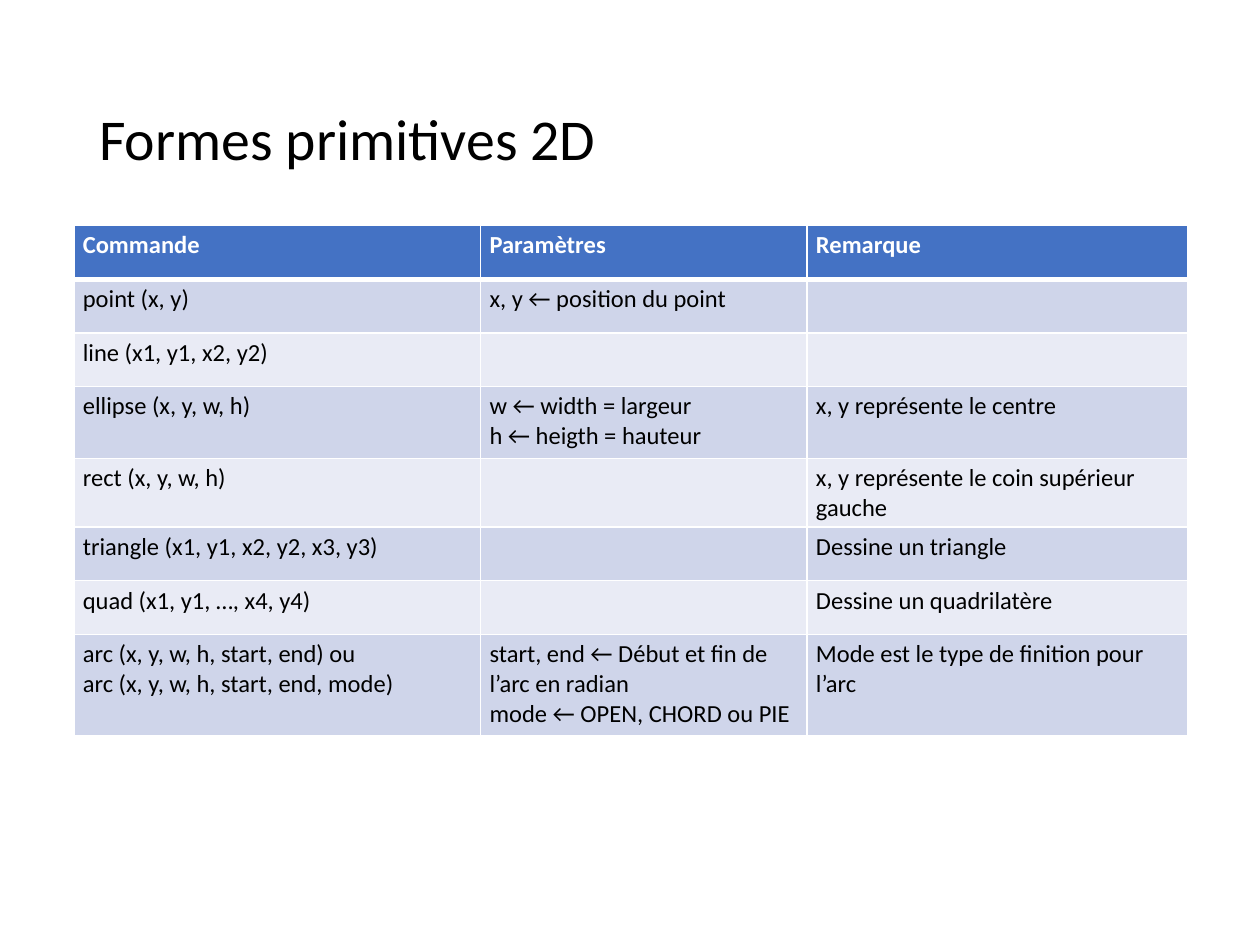
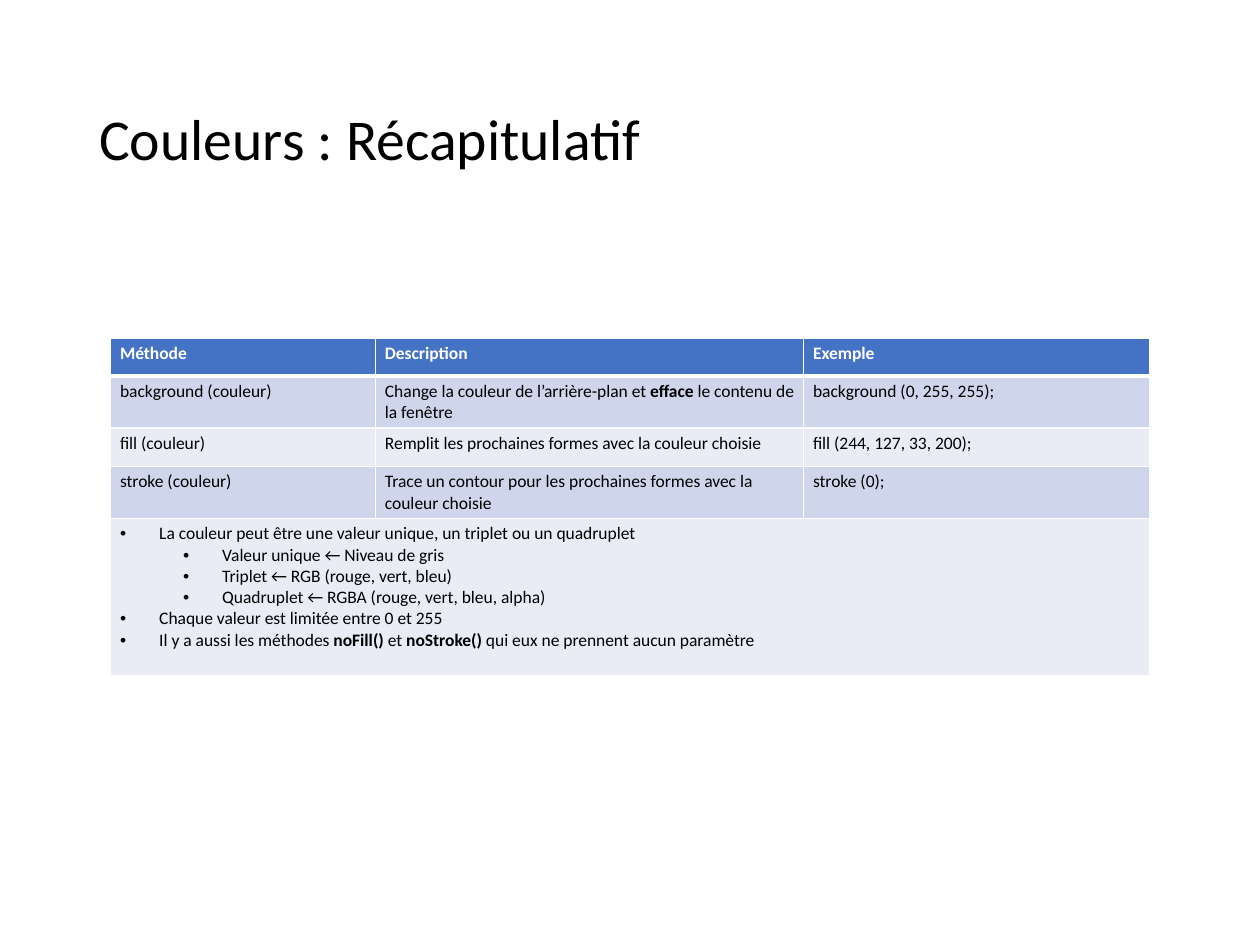
from dataclasses import dataclass

from lxml.etree import SubElement as Sub
from pptx import Presentation as Deck
from pptx.dml.color import RGBColor as Rgb
from pptx.enum.text import MSO_ANCHOR as Anchor
from pptx.oxml.ns import qn
from pptx.util import Cm, Pt


@dataclass(frozen=True)
class Theme:
    font: str = "Calibri"
    ink: str = "000000"
    white: str = "FFFFFF"
    head: str = "4472C4"
    bands: tuple[str, str] = ("CFD5EA", "E9EBF5")
    title: float = 33
    thin: float = 1
    thick: float = 3


THEME = Theme()


@dataclass(frozen=True)
class Para:
    """One paragraph: *stars* mark bold, a line feed breaks the line."""
    text: str
    depth: int = 0  # 0 is plain, 1 and 2 are bullet levels


Cell = tuple[Para, ...]


@dataclass(frozen=True)
class Grid:
    left: float
    top: float
    cols: tuple[float, ...]
    heights: tuple[float, ...]
    size: float
    inset: float
    rows: tuple[tuple[Cell, ...], ...]  # a row of one cell spans the table


@dataclass(frozen=True)
class Page:
    title: str
    grid: Grid


def cell(*lines: str) -> Cell:
    return tuple(Para(line) for line in lines)


# Content
SHAPES = Grid(
    left=1.49, top=4.55, cols=(8.2, 6.58, 7.67),
    heights=(1.08, 1.08, 1.08, 1.45, 1.08, 1.08, 1.08, 2.05),
    size=14, inset=0.18,
    rows=(
        (cell("Commande"), cell("Paramètres"), cell("Remarque")),
        (cell("point (x, y)"), cell("x, y ← position du point"), cell()),
        (cell("line (x1, y1, x2, y2)"), cell(), cell()),
        (cell("ellipse (x, y, w, h)"),
         cell("w ← width = largeur", "h ← heigth = hauteur"),
         cell("x, y représente le centre")),
        (cell("rect (x, y, w, h)"), cell(),
         cell("x, y représente le coin supérieur gauche")),
        (cell("triangle (x1, y1, x2, y2, x3, y3)"), cell(),
         cell("Dessine un triangle")),
        (cell("quad (x1, y1, …, x4, y4)"), cell(),
         cell("Dessine un quadrilatère")),
        (cell("arc (x, y, w, h, start, end) ou\n"
              "arc (x, y, w, h, start, end, mode)"),
         cell("start, end ← Début et fin de l’arc en radian",
              "mode ← OPEN, CHORD ou PIE"),
         cell("Mode est le type de finition pour l’arc")),
    ),
)

COLOURS = Grid(
    left=2.23, top=6.81, cols=(5.34, 8.63, 6.98),
    heights=(0.77, 1.05, 0.77, 1.05, 3.18),
    size=10, inset=0.19,
    rows=(
        (cell("Méthode"), cell("Description"), cell("Exemple")),
        (cell("background (couleur)"),
         cell("Change la couleur de l’arrière-plan et *efface* "
              "le contenu de la fenêtre"),
         cell("background (0, 255, 255);")),
        (cell("fill (couleur)"),
         cell("Remplit les prochaines formes avec la couleur choisie"),
         cell("fill (244, 127, 33, 200);")),
        (cell("stroke (couleur)"),
         cell("Trace un contour pour les prochaines formes "
              "avec la couleur choisie"),
         cell("stroke (0);")),
        ((Para("La couleur peut être une valeur unique, un triplet "
               "ou un quadruplet", 1),
          Para("Valeur unique ← Niveau de gris", 2),
          Para("Triplet ← RGB (rouge, vert, bleu)", 2),
          Para("Quadruplet ← RGBA (rouge, vert, bleu, alpha)", 2),
          Para("Chaque valeur est limitée entre 0 et 255", 1),
          Para("Il y a aussi les méthodes *noFill() *et *noStroke()* "
               "qui eux ne prennent aucun paramètre", 1)),),
    ),
)

PAGES = (
    Page("Formes primitives 2D", SHAPES),
    Page("Couleurs : Récapitulatif", COLOURS),
)


# Text
def add_run(para, text: str, size: float, ink: str, bold: bool) -> None:
    run = para.add_run()
    run.text = text
    run.font.name = THEME.font
    run.font.size = Pt(size)
    run.font.bold = bold
    run.font.color.rgb = Rgb.from_string(ink)


def add_bullet(para, depth: int) -> None:
    para.level = depth - 1
    props = para._p.get_or_add_pPr()
    props.set("marL", str(Cm(0.79 + 1.27 * (depth - 1))))
    props.set("indent", str(Cm(-0.79)))
    Sub(props, qn("a:buFont"), typeface="Arial")
    Sub(props, qn("a:buChar"), char="•")


def add_text(frame, paras: Cell, size: float, ink: str,
             bold: bool = False) -> None:
    for num, item in enumerate(paras):
        para = frame.add_paragraph() if num else frame.paragraphs[0]
        if item.depth:
            add_bullet(para, item.depth)
        for row, line in enumerate(item.text.split("\n")):
            if row:
                para.add_line_break()
            for part, text in enumerate(line.split("*")):
                if text:
                    add_run(para, text, size, ink, bold or part % 2 == 1)


def add_title(slide, text: str) -> None:
    box = slide.shapes.add_textbox(Cm(1.75), Cm(1.01), Cm(21.9), Cm(3.68))
    frame = box.text_frame
    frame.word_wrap = True
    frame.vertical_anchor = Anchor.MIDDLE
    add_text(frame, cell(text), THEME.title, THEME.ink)
    frame.paragraphs[0].line_spacing = 0.9


# Table
def add_edges(spot, row: int) -> None:
    """Draw white edges, with a thick rule below the header."""
    props = spot._tc.get_or_add_tcPr()
    for side in "LRTB":
        heavy = (row, side) in ((0, "B"), (1, "T"))
        width = Pt(THEME.thick if heavy else THEME.thin)
        edge = Sub(props, qn(f"a:ln{side}"), w=str(width))
        fill = Sub(edge, qn("a:solidFill"))
        Sub(fill, qn("a:srgbClr"), val=THEME.white)


def add_grid(slide, grid: Grid) -> None:
    table = slide.shapes.add_table(
        len(grid.rows), len(grid.cols), Cm(grid.left), Cm(grid.top),
        Cm(sum(grid.cols)), Cm(sum(grid.heights))).table
    table.horz_banding = False
    for col, width in zip(table.columns, grid.cols):
        col.width = Cm(width)
    for row, (cells, height) in enumerate(zip(grid.rows, grid.heights)):
        table.rows[row].height = Cm(height)
        if len(cells) == 1:
            table.cell(row, 0).merge(table.cell(row, len(grid.cols) - 1))
        head = row == 0
        back = THEME.head if head else THEME.bands[(row - 1) % 2]
        for col in range(len(grid.cols)):
            spot = table.cell(row, col)
            spot.margin_left = spot.margin_right = Cm(grid.inset)
            spot.margin_top = spot.margin_bottom = Cm(0.1)
            add_edges(spot, row)
            spot.fill.solid()
            spot.fill.fore_color.rgb = Rgb.from_string(back)
            if col < len(cells):
                ink = THEME.white if head else THEME.ink
                add_text(spot.text_frame, cells[col], grid.size, ink, head)


def main() -> None:
    deck = Deck()
    deck.slide_width, deck.slide_height = Cm(25.4), Cm(19.05)
    for page in PAGES:
        slide = deck.slides.add_slide(deck.slide_layouts[6])
        add_title(slide, page.title)
        add_grid(slide, page.grid)
    deck.save("out.pptx")


if __name__ == "__main__":
    main()
